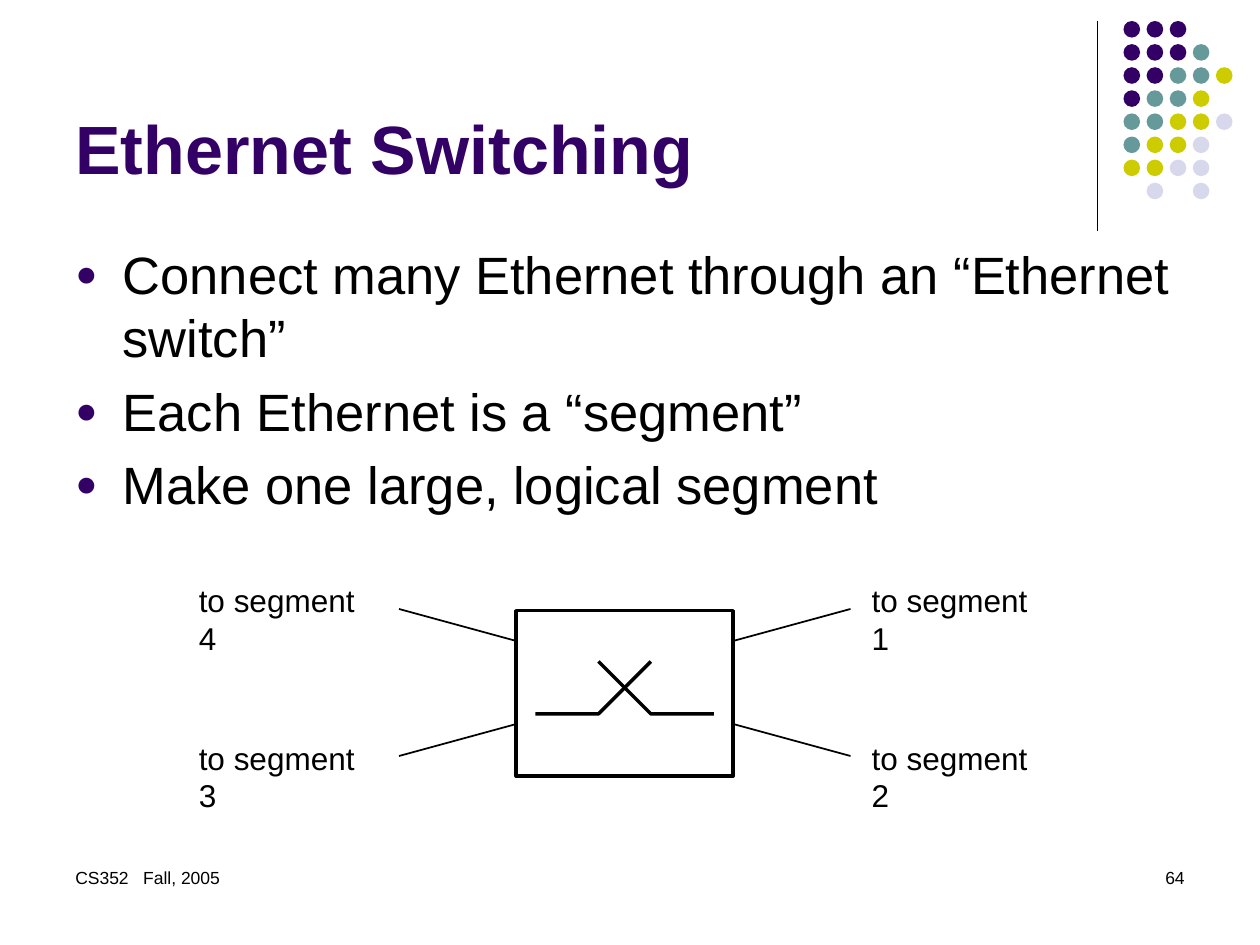
from lxml.etree import SubElement
from pptx import Presentation
from pptx.dml.color import RGBColor
from pptx.enum.shapes import MSO_CONNECTOR, MSO_SHAPE
from pptx.enum.text import MSO_ANCHOR, PP_ALIGN
from pptx.oxml.ns import qn
from pptx.util import Pt

BLACK = RGBColor(0x00, 0x00, 0x00)
WHITE = RGBColor(0xFF, 0xFF, 0xFF)
PURPLE = RGBColor(0x33, 0x00, 0x66)
TEAL = RGBColor(0x66, 0x99, 0x99)
LIME = RGBColor(0xCC, 0xCC, 0x00)
PALE = RGBColor(0xD8, 0xD8, 0xEC)

deck = Presentation()
deck.slide_width, deck.slide_height = Pt(720), Pt(540)
slide = deck.slides.add_slide(deck.slide_layouts[6])
shapes = slide.shapes


def add_text(lines, left, top, width, height, size, color=BLACK, bold=False,
             align=PP_ALIGN.LEFT, anchor=MSO_ANCHOR.TOP, bullet=False):
    box = shapes.add_textbox(Pt(left), Pt(top), Pt(width), Pt(height))
    frame = box.text_frame
    frame.word_wrap = True
    frame.vertical_anchor = anchor
    frame.text = "\n".join(lines)
    form = {"name": "Arial", "size": Pt(size), "bold": bold}
    for rank, para in enumerate(frame.paragraphs):
        para.alignment = align
        if bullet:
            para.space_before = Pt(6 if rank else 0)
            props = para._p.get_or_add_pPr()
            props.set("marL", str(Pt(27)))
            props.set("indent", str(-Pt(27)))
            tint = SubElement(props, qn("a:buClr"))
            SubElement(tint, qn("a:srgbClr"), val=str(PURPLE))
            SubElement(props, qn("a:buSzPct"), val="70000")
            SubElement(props, qn("a:buFont"), typeface="Arial")
            SubElement(props, qn("a:buChar"), char="●")
        for key, value in form.items():
            setattr(para.font, key, value)
        para.font.color.rgb = color


def add_line(x1, y1, x2, y2, weight):
    line = shapes.add_connector(MSO_CONNECTOR.STRAIGHT, Pt(x1), Pt(y1), Pt(x2), Pt(y2))
    line.line.color.rgb = BLACK
    line.line.width = Pt(weight)
    SubElement(line._element.spPr, qn("a:effectLst"))


add_line(627, 12, 627, 132, 0.75)

hues = {"P": PURPLE, "T": TEAL, "L": LIME, "W": PALE}
rows = ["PPP", "PPPT", "PPTTL", "PTTL", "TTLLW", "TLLW", "LLWW", " W W"]
for row, marks in enumerate(rows):
    for col, mark in enumerate(marks):
        if mark in hues:
            dot = shapes.add_shape(MSO_SHAPE.OVAL, Pt(642 + 13.2 * col),
                                   Pt(12 + 13.2 * row), Pt(9.5), Pt(9.5))
            dot.shadow.inherit = False
            dot.fill.solid()
            dot.fill.fore_color.rgb = hues[mark]
            dot.line.fill.background()

add_text(["CS352   Fall, 2005"], 36, 492, 168, 36, 10)
add_text(["64"], 516, 492, 168, 36, 10, align=PP_ALIGN.RIGHT)
add_text(["Ethernet Switching"], 36, 9, 594, 102, 39, PURPLE, True,
         anchor=MSO_ANCHOR.BOTTOM)
points = ["Connect many Ethernet through an “Ethernet switch”",
          "Each Ethernet is a “segment”",
          "Make one large, logical segment"]
add_text(points, 36, 135, 648, 347, 30, bullet=True)

mid = 357
switch = shapes.add_shape(MSO_SHAPE.RECTANGLE, Pt(mid - 62), Pt(349), Pt(124), Pt(94.5))
switch.shadow.inherit = False
switch.fill.solid()
switch.fill.fore_color.rgb = WHITE
switch.line.color.rgb = BLACK
switch.line.width = Pt(2)

for side in (1, -1):
    pen = shapes.build_freeform(Pt(mid - 15 * side), Pt(378))
    pen.add_line_segments([(Pt(mid + 15 * side), Pt(408)),
                           (Pt(mid + 51 * side), Pt(408))], close=False)
    cross = pen.convert_to_shape()
    cross.shadow.inherit = False
    cross.fill.background()
    cross.line.color.rgb = BLACK
    cross.line.width = Pt(2)
    for near, far in ((366, 348), (414, 432)):
        add_line(mid + 63 * side, near, mid + 129 * side, far, 1)

spots = [(491, 328.5), (491, 418.5), (106.5, 418.5), (106.5, 328.5)]
for num, (left, top) in enumerate(spots, 1):
    add_text([f"to segment {num}"], left, top, 118, 29, 18)

deck.save("out.pptx")
